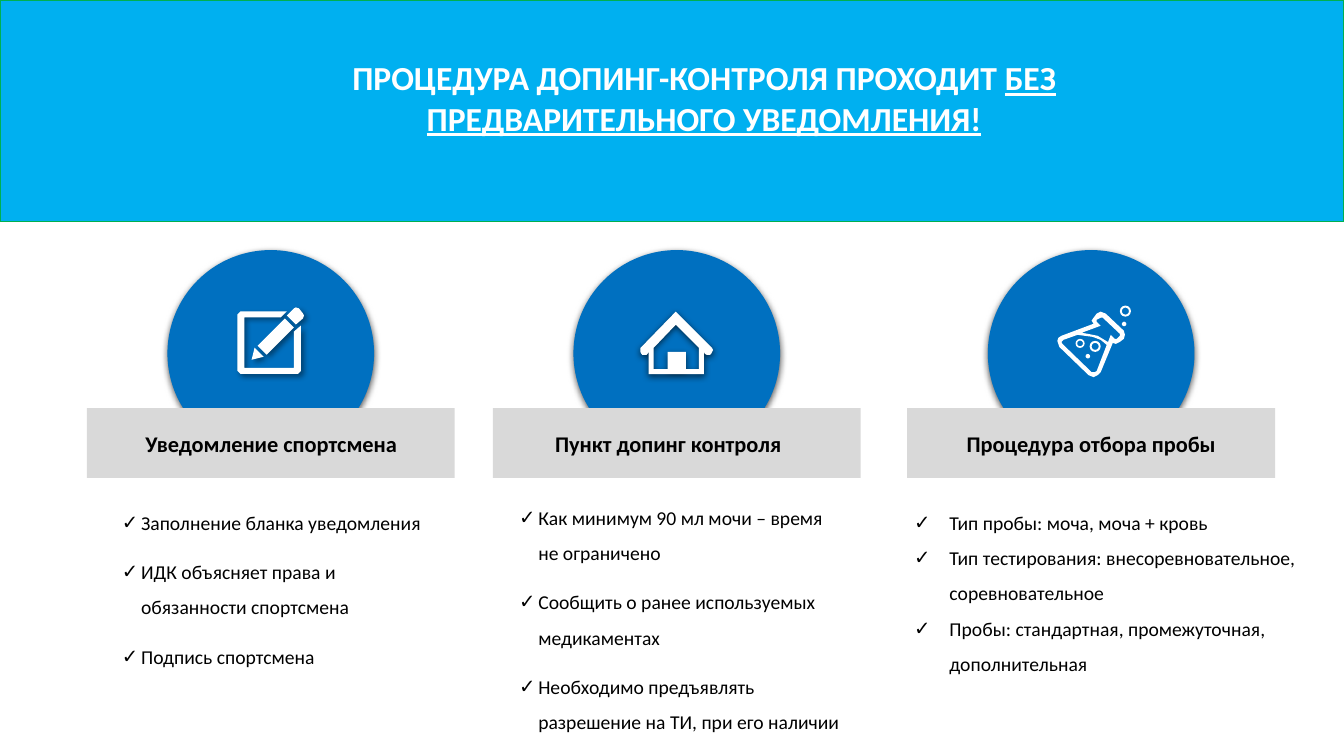
from lxml.etree import SubElement
from pptx import Presentation
from pptx.dml.color import RGBColor
from pptx.enum.shapes import MSO_SHAPE as SHAPE
from pptx.enum.text import MSO_ANCHOR as ANCHOR, MSO_AUTO_SIZE as AUTO, PP_ALIGN as ALIGN
from pptx.oxml.ns import qn
from pptx.util import Pt

COLORS = {"banner": "00B0F0", "edge": "00B050", "circle": "0070C0",
          "bar": "D9D9D9", "white": "FFFFFF", "black": "000000"}
SLIDE_W, SLIDE_H = 960, 540
COL_Y, COL_W, DISC = 178.6, 262.8, 147.6
BAR_Y, BAR_H = 291.6, 49.7
UNIT = 0.72
SOFT = (63, 5, 1.5, 90)

NOTE = [
    [(65, 11), (58, 17), (49, 8), (56, 1), (58, 0), (61, 1), (65, 6), (66, 8)],
    [(17, 40), (26, 49), (14, 52)],
    [(56, 20), (29, 47), (20, 38), (47, 11)],
    [(7, 10), (7, 60), (56, 60), (56, 24), (63, 18), (63, 63), (60, 66),
     (3, 66), (0, 63), (0, 7), (3, 4), (49, 4), (43, 10)],
]
HOUSE = [
    [(70, 35), (35, 0), (1, 35), (0, 36), (0, 40), (1, 42), (2, 43), (6, 43),
     (7, 42), (8, 40), (8, 62), (63, 62), (63, 40), (64, 42), (66, 43),
     (69, 43), (70, 42), (71, 40), (72, 38), (71, 36)],
    [(58, 57), (45, 57), (45, 40), (27, 40), (27, 57), (13, 57), (13, 36),
     (35, 13), (58, 36)],
]
FLASK = [
    [(48, 2), (43, 0), (39, 2), (36, 6), (34, 9), (36, 12), (4, 24), (1, 26),
     (0, 29), (2, 35), (31, 63), (36, 65), (40, 63), (43, 60), (55, 31),
     (58, 32), (62, 30), (66, 27), (67, 23), (66, 19)],
    [(39, 59), (37, 60), (34, 60), (5, 32), (4, 30), (6, 28), (20, 23),
     (35, 25), (43, 28), (49, 33)],
    [(62, 24), (59, 27), (57, 27), (53, 23), (50, 31), (50, 30), (40, 24),
     (30, 22), (24, 21), (43, 14), (39, 10), (39, 8), (43, 6), (45, 6), (62, 22)],
]
BUBBLES = [(SHAPE.DONUT, 32, 29, 11), (SHAPE.DONUT, 62, -6, 11),
           (SHAPE.DONUT, 18, 27, 9), (SHAPE.OVAL, 28, 42, 4.5),
           (SHAPE.OVAL, 64, 10, 4.5)]

COLUMNS = [
    {"x": 62, "head": ("Уведомление спортсмена", 37.5, 188.6),
     "icon": (NOTE, 66, 41, (40, 4, 3, 45), []),
     "list": (21.5, 352.8, 222.5, 118.8), "indent": (13.7, -13.7), "gap": 10,
     "items": ["Заполнение бланка уведомления",
               "ИДК объясняет права и обязанности спортсмена",
               "Подпись спортсмена"]},
    {"x": 352, "head": ("Пункт допинг контроля", 40.4, 169.9),
     "icon": (HOUSE, 72, 44, SOFT, []),
     "list": (15.2, 349.2, 239.8, 169.2), "indent": (13.7, -13.7), "gap": 10,
     "items": ["Как минимум 90 мл мочи – время не ограничено",
               "Сообщить о ранее используемых медикаментах",
               "Необходимо предъявлять разрешение на ТИ, при его наличии"]},
    {"x": 648, "head": ("Процедура отбора пробы", 38.2, 186.5),
     "icon": (FLASK, 67, 44, None, BUBBLES),
     "list": (-9.4, 352.8, 311.8, 161.3), "indent": (36, -25.2), "gap": 0,
     "items": ["Тип пробы: моча, моча + кровь",
               "Тип тестирования: внесоревновательное, соревновательное",
               "Пробы: стандартная, промежуточная, дополнительная"]},
]


def rgb(name):
    """Return the named colour."""
    return RGBColor.from_string(COLORS[name])


def paint(sp, fill, shadow=None):
    """Give a shape a flat fill, no line and an optional outer shadow."""
    sp.fill.solid()
    sp.fill.fore_color.rgb = rgb(fill)
    sp.line.fill.background()
    sp.shadow.inherit = False
    if shadow:
        alpha, blur, dist, angle = shadow
        effects = sp.element.spPr.find(qn("a:effectLst"))
        outer = SubElement(effects, qn("a:outerShdw"), blurRad=str(Pt(blur)),
                           dist=str(Pt(dist)), dir=str(angle * 60000),
                           algn="ctr", rotWithShape="0")
        clr = SubElement(outer, qn("a:srgbClr"), val=COLORS["black"])
        SubElement(clr, qn("a:alpha"), val=str(alpha * 1000))


def add_block(shapes, kind, x, y, w, h, fill, shadow=None):
    """Add a painted preset shape."""
    sp = shapes.add_shape(kind, Pt(x), Pt(y), Pt(w), Pt(h))
    paint(sp, fill, shadow)
    return sp


def set_frame(sp, x, y, w, h):
    """Place a text shape and set up its frame."""
    sp.left, sp.top, sp.width, sp.height = Pt(x), Pt(y), Pt(w), Pt(h)
    tf = sp.text_frame
    tf.word_wrap = True
    tf.auto_size = AUTO.SHAPE_TO_FIT_TEXT
    tf.vertical_anchor = ANCHOR.TOP
    tf.margin_left = tf.margin_right = tf.margin_top = tf.margin_bottom = Pt(3.6)
    return tf


def style_runs(p, size, color, bold=False):
    """Format every run of a paragraph."""
    for r in p.runs:
        r.font.name, r.font.size, r.font.bold = "Calibri", Pt(size), bold
        r.font.color.rgb = rgb(color)


def add_banner(s, x, y, w, h):
    """Draw the banner and put the title on it."""
    sp = add_block(s.shapes, SHAPE.RECTANGLE, x, y, w, h, "banner")
    sp.line.color.rgb = rgb("edge")
    sp.line.width = Pt(1)
    title = s.shapes.title
    sp.element.addnext(title.element)
    tf = set_frame(title, x + 160.6, y + 37.4, 684.7, 65.5)
    tf.text = "ПРОЦЕДУРА ДОПИНГ-КОНТРОЛЯ ПРОХОДИТ "
    p = tf.paragraphs[0]
    p.alignment = ALIGN.CENTER
    r = p.add_run()
    r.text = "БЕЗ ПРЕДВАРИТЕЛЬНОГО УВЕДОМЛЕНИЯ!"
    r.font.underline = True
    style_runs(p, 24, "white", True)


def add_icon(s, x, y, outlines, shadow, bubbles):
    """Draw a white icon from its outlines and bubbles."""
    shapes = s.shapes.add_group_shape().shapes if bubbles else s.shapes
    fb = shapes.build_freeform(*outlines[0][0], scale=Pt(UNIT))
    for i, points in enumerate(outlines):
        if i:
            fb.move_to(*points[0])
        fb.add_line_segments(points[1:], close=True)
    paint(fb.convert_to_shape(Pt(x), Pt(y)), "white", shadow)
    for kind, dx, dy, size in bubbles:
        sp = add_block(shapes, kind, x + dx * UNIT, y + dy * UNIT,
                       size * UNIT, size * UNIT, "white")
        if kind == SHAPE.DONUT:
            sp.adjustments[0] = 0.18


def add_list(sp, box, items, indent, gap):
    """Fill a body placeholder with a check-marked list."""
    tf = set_frame(sp, *box)
    tf.text = "\n".join(items)
    for i, p in enumerate(tf.paragraphs):
        p.alignment = ALIGN.LEFT
        p.line_spacing = 1.5
        p.space_before = Pt(gap if i else 0)
        style_runs(p, 14, "black")
        pPr = p._p.get_or_add_pPr()
        pPr.set("marL", str(Pt(indent[0])))
        pPr.set("indent", str(Pt(indent[1])))
        clr = SubElement(pPr, qn("a:buClr"))
        SubElement(clr, qn("a:srgbClr"), val=COLORS["black"])
        SubElement(pPr, qn("a:buChar"), char="✓")


def add_column(s, body, x, y, w, col):
    """Draw one step: circle, icon, heading bar and list."""
    add_block(s.shapes, SHAPE.OVAL, x + (w - DISC) / 2, y, DISC, DISC, "circle", SOFT)
    outlines, width, dy, shadow, bubbles = col["icon"]
    add_icon(s, x + (w - width * UNIT) / 2, y + dy, outlines, shadow, bubbles)
    add_block(s.shapes, SHAPE.RECTANGLE, x, BAR_Y, w, BAR_H, "bar")
    text, dx, head_w = col["head"]
    tf = set_frame(s.shapes.add_textbox(0, 0, 0, 0), x + dx, BAR_Y + 12.2, head_w, 23.8)
    tf.text = text
    p = tf.paragraphs[0]
    p.alignment = ALIGN.CENTER
    style_runs(p, 16, "black", True)
    list_dx, *rest = col["list"]
    add_list(body, (x + list_dx, *rest), col["items"], col["indent"], col["gap"])


def main():
    """Build the slide and save it."""
    prs = Presentation()
    prs.slide_width, prs.slide_height = Pt(SLIDE_W), Pt(SLIDE_H)
    s = prs.slides.add_slide(prs.slide_layouts[4])
    bodies = {sp.placeholder_format.idx: sp for sp in s.placeholders}
    spare = bodies[3].element
    spare.getparent().remove(spare)
    for idx, col in zip((1, 2, 4), COLUMNS):
        add_column(s, bodies[idx], col["x"], COL_Y, COL_W, col)
    add_banner(s, 0, 0, SLIDE_W, 158.4)
    prs.save("out.pptx")


if __name__ == "__main__":
    main()
